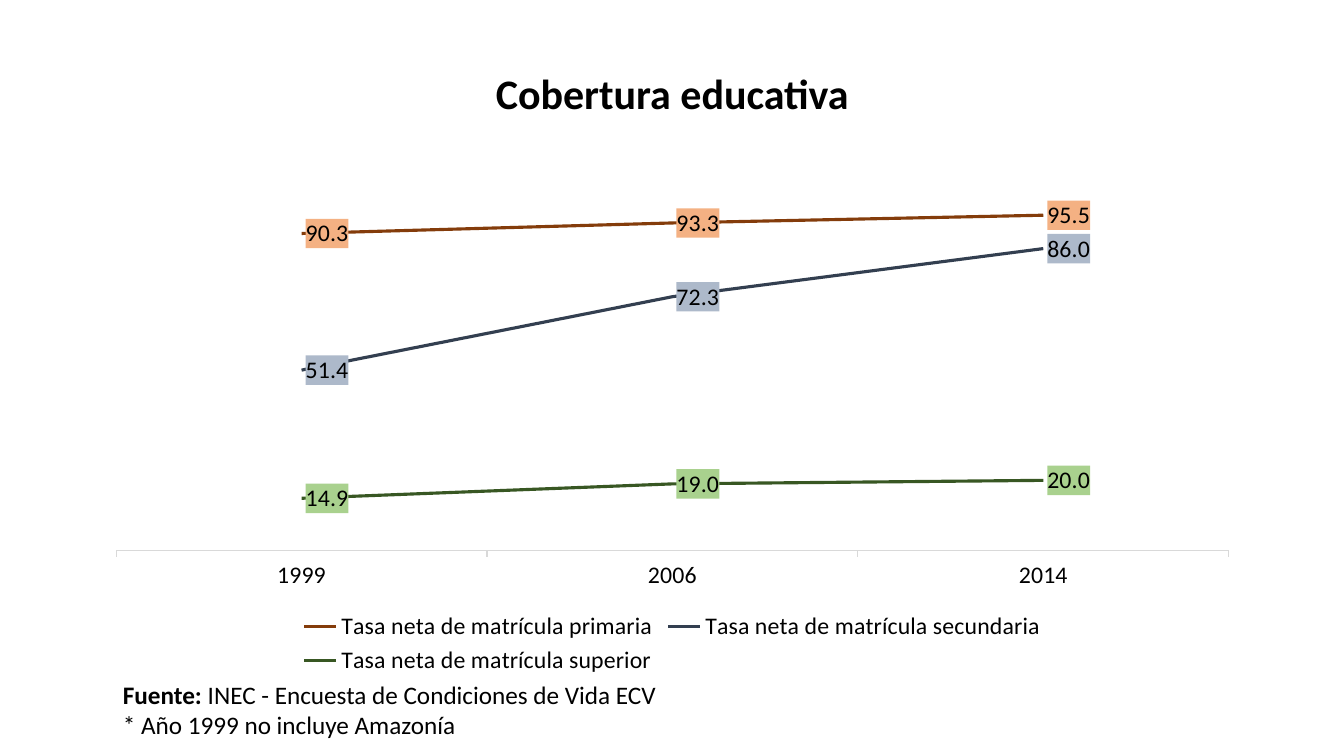
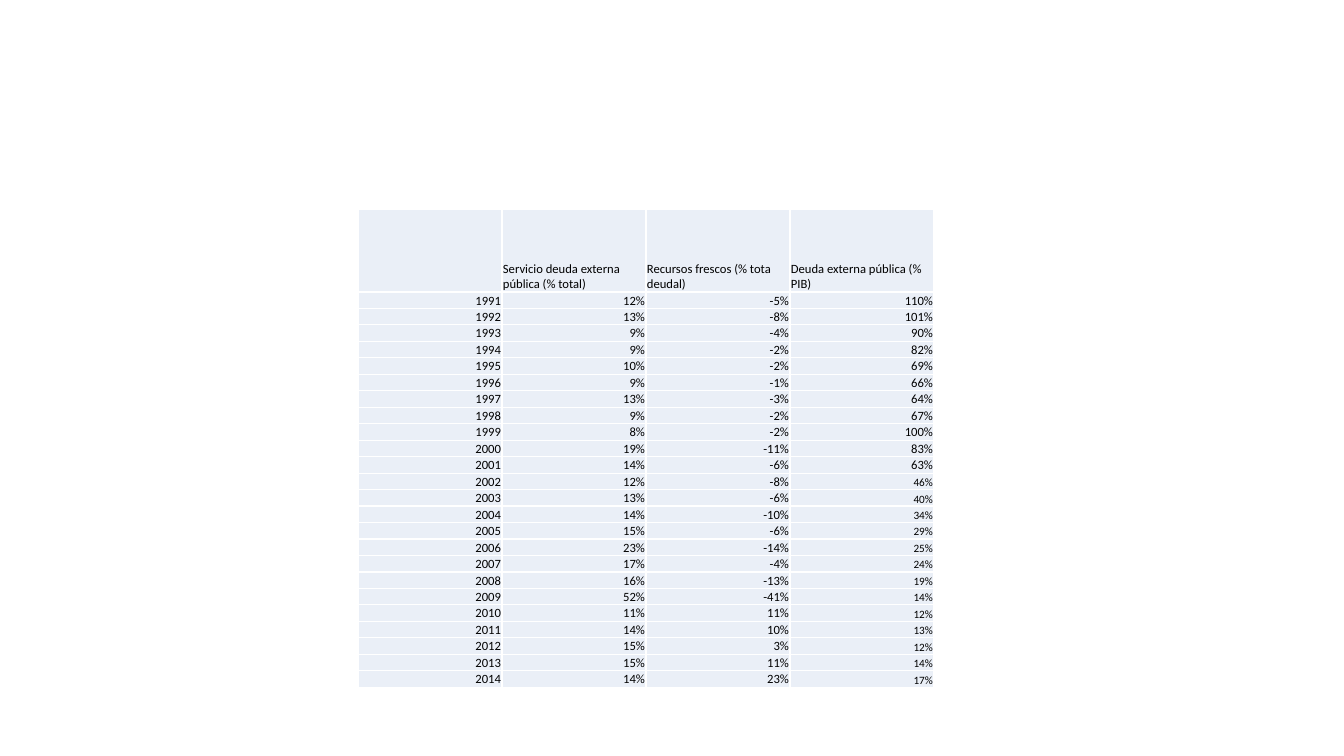
"""Builds two slides: school enrolment as a line chart and public debt as a table."""
from pptx import Presentation
from pptx.chart.data import CategoryChartData
from pptx.dml.color import RGBColor
from pptx.enum.chart import (XL_CHART_TYPE, XL_LABEL_POSITION,
                             XL_LEGEND_POSITION, XL_TICK_MARK)
from pptx.enum.text import MSO_ANCHOR, MSO_AUTO_SIZE, PP_ALIGN
from pptx.oxml import parse_xml
from pptx.oxml.ns import nsdecls, qn
from pptx.util import Emu, Pt

LINE = XL_CHART_TYPE.LINE
BESIDE = XL_LABEL_POSITION.RIGHT
BELOW = XL_LEGEND_POSITION.BOTTOM
TICK = XL_TICK_MARK.OUTSIDE
MIDDLE, BOTTOM = MSO_ANCHOR.MIDDLE, MSO_ANCHOR.BOTTOM
GROW = MSO_AUTO_SIZE.SHAPE_TO_FIT_TEXT
LEFT, CENTER, RIGHT = PP_ALIGN.LEFT, PP_ALIGN.CENTER, PP_ALIGN.RIGHT

WIDE, HIGH = 1344, 756
SCALE = 12192000 / WIDE
FONT = "Calibri"
BLACK = RGBColor(0x00, 0x00, 0x00)
WHITE = RGBColor(0xFF, 0xFF, 0xFF)
GREY = RGBColor(0xD9, 0xD9, 0xD9)
PALE = RGBColor(0xEA, 0xEF, 0xF7)
BROWN, PEACH = RGBColor(0x84, 0x3C, 0x0B), RGBColor(0xF4, 0xB1, 0x83)
NAVY, STEEL = RGBColor(0x33, 0x3F, 0x50), RGBColor(0xAD, 0xB9, 0xCA)
GREEN, MINT = RGBColor(0x38, 0x57, 0x23), RGBColor(0xA9, 0xD1, 0x8E)

YEARS = ["1999", "2006", "2014"]
RATES = [
    ("primaria", (90.3, 93.3, 95.5), BROWN, PEACH),
    ("secundaria", (51.4, 72.3, 86.0), NAVY, STEEL),
    ("superior", (14.9, 19.0, 20.0), GREEN, MINT),
]
HEADS = ["", "Servicio deuda externa pública (% total)",
         "Recursos frescos (% tota deudal)", "Deuda externa pública (% PIB)"]
FIRST = 1991
SMALL = 2002
DEBT = [
    (12, -5, 110), (13, -8, 101), (9, -4, 90), (9, -2, 82), (10, -2, 69),
    (9, -1, 66), (13, -3, 64), (9, -2, 67), (8, -2, 100), (19, -11, 83),
    (14, -6, 63), (12, -8, 46), (13, -6, 40), (14, -10, 34), (15, -6, 29),
    (23, -14, 25), (17, -4, 24), (16, -13, 19), (52, -41, 14), (11, 11, 12),
    (14, 10, 13), (15, 3, 12), (15, 11, 14), (14, 23, 17),
]


def px(size):
    """Turn pixels into EMU."""
    return Emu(round(size * SCALE))


def box(*sizes):
    """Turn left, top, width and height into EMU."""
    return [px(size) for size in sizes]


def style(font, size, bold=False):
    """Give a font the shared face and colour."""
    font.name, font.size, font.bold = FONT, Pt(size), bold
    font.color.rgb = BLACK


def add_title(slide, text):
    """Fill and place the title placeholder."""
    title = slide.shapes.title
    title.left, title.top, title.width, title.height = box(93, 40, 1159, 111)
    frame = title.text_frame
    frame.text = text
    frame.vertical_anchor = MIDDLE
    para = frame.paragraphs[0]
    para.alignment, para.line_spacing = CENTER, 0.9
    style(para.runs[0].font, 30, True)


def add_note(slide, lines):
    """Write lines of (text, bold) runs in a box that grows."""
    frame = slide.shapes.add_textbox(*box(113, 674, 559, 72)).text_frame
    frame.word_wrap = False
    frame.auto_size = GROW
    for i, runs in enumerate(lines):
        para = frame.add_paragraph() if i else frame.paragraphs[0]
        for text, bold in runs:
            run = para.add_run()
            run.text = text
            style(run.font, 18, bold)


def set_plot(chart, left, top, width, height):
    """Fix the inner plot area as shares of the chart."""
    area = chart._chartSpace.find(".//" + qn("c:plotArea"))
    for old in area.findall(qn("c:layout")):
        area.remove(old)
    area.insert(0, parse_xml(
        f'<c:layout {nsdecls("c")}><c:manualLayout>'
        '<c:layoutTarget val="inner"/>'
        '<c:xMode val="edge"/><c:yMode val="edge"/>'
        f'<c:x val="{left}"/><c:y val="{top}"/>'
        f'<c:w val="{width}"/><c:h val="{height}"/>'
        '</c:manualLayout></c:layout>'))


def add_labels(series, fill):
    """Show values on a filled patch beside the points."""
    labels = series.data_labels
    labels.show_value = True
    labels.number_format, labels.number_format_is_linked = "0.0", False
    labels.position = BESIDE
    style(labels.font, 17)
    labels._element.find(qn("c:txPr")).addprevious(parse_xml(
        f'<c:spPr {nsdecls("c", "a")}><a:solidFill>'
        f'<a:srgbClr val="{fill}"/></a:solidFill></c:spPr>'))


def add_lines(slide):
    """Draw the enrolment rates as a line chart."""
    data = CategoryChartData(number_format="0.0")
    data.categories = YEARS
    for level, values, _, _ in RATES:
        data.add_series(f"Tasa neta de matrícula {level}", values)
    chart = slide.shapes.add_chart(LINE, *box(93, 118, 1159, 562), data).chart
    style(chart.font, 17)
    chart.has_title = False
    chart.has_legend = True
    chart.legend.position = BELOW
    chart.legend.include_in_layout = False
    style(chart.legend.font, 17)
    axis = chart.category_axis
    axis.major_tick_mark = TICK
    axis.format.line.color.rgb, axis.format.line.width = GREY, Pt(0.75)
    style(axis.tick_labels.font, 17)
    scale = chart.value_axis
    scale.visible = scale.has_major_gridlines = False
    scale.minimum_scale, scale.maximum_scale = 0, 120
    plot = chart.plots[0]
    plot.vary_by_categories = False
    for series, (_, _, color, fill) in zip(plot.series, RATES):
        series.smooth = False
        series.format.line.color.rgb = color
        series.format.line.width = Pt(2.25)
        add_labels(series, fill)
    set_plot(chart, 0.02, 0.02, 0.96, 0.75)


def fill_cell(cell, text, size, align):
    """Write one cell with pale fill and white borders."""
    cell.margin_left = cell.margin_right = cell.margin_top = px(1)
    cell.margin_bottom = 0
    cell.vertical_anchor = BOTTOM
    cell.text_frame.text = text
    para = cell.text_frame.paragraphs[0]
    para.alignment = align
    for run in para.runs:
        style(run.font, size)
    for i, side in enumerate("LRTB"):
        cell._tc.get_or_add_tcPr().insert(i, parse_xml(
            f'<a:ln{side} {nsdecls("a")} w="{Pt(1)}"><a:solidFill>'
            f'<a:srgbClr val="{WHITE}"/></a:solidFill></a:ln{side}>'))
    cell.fill.solid()
    cell.fill.fore_color.rgb = PALE


def add_debt(slide):
    """Draw the debt table, one row a year."""
    frame = slide.shapes.add_table(len(DEBT) + 1, len(HEADS),
                                   *box(358, 209, 576, 479))
    table = frame.table
    table.first_row = table.horz_banding = False
    for col in table.columns:
        col.width = px(144)
    for row in table.rows:
        row.height = px(396) // len(DEBT)
    table.rows[0].height = px(83)
    for c, head in enumerate(HEADS):
        fill_cell(table.cell(0, c), head, 9, LEFT)
    for r, rates in enumerate(DEBT, 1):
        year = FIRST + r - 1
        for c, text in enumerate([str(year)] + [f"{rate}%" for rate in rates]):
            size = 8 if c == 3 and year >= SMALL else 9
            fill_cell(table.cell(r, c), text, size, RIGHT)


def main():
    """Build and save both slides."""
    deck = Presentation()
    deck.slide_width, deck.slide_height = px(WIDE), px(HIGH)
    slide = deck.slides.add_slide(deck.slide_layouts[5])
    add_title(slide, "Cobertura educativa")
    add_note(slide, [
        [("Fuente: ", True),
         ("INEC - Encuesta de Condiciones de Vida ECV", False)],
        [("* Año 1999 no incluye Amazonía", False)],
    ])
    add_lines(slide)
    add_debt(deck.slides.add_slide(deck.slide_layouts[6]))
    deck.save("out.pptx")


if __name__ == "__main__":
    main()
